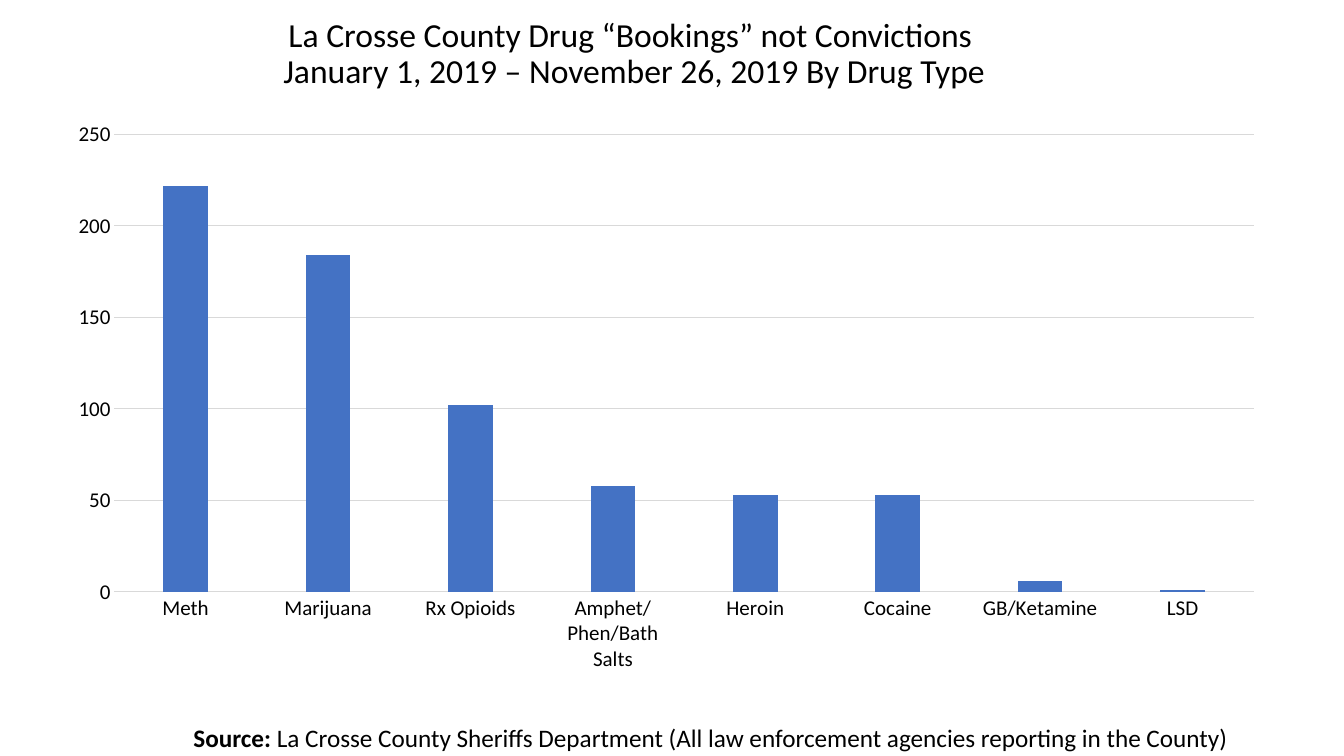
from lxml import etree
from pptx import Presentation
from pptx import util as u
from pptx.chart import data as cd
from pptx.dml.color import RGBColor
from pptx.enum import chart as ch, text as tx
from pptx.oxml import parse_xml
from pptx.oxml.ns import nsdecls, qn

FONT = "Calibri"
HUES = {"ink": "000000", "bar": "4472C4", "grid": "D9D9D9"}
COUNTS = {
    "Meth": 222, "Marijuana": 184, "Rx Opioids": 102,
    "Amphet/Phen/Bath Salts": 58, "Heroin": 53, "Cocaine": 53,
    "GB/Ketamine": 6, "LSD": 1,
}
PLOT = {"x": 0.048, "y": 0.062, "w": 0.927, "h": 0.733}


def hue(name):
    """Return a named colour."""
    return RGBColor.from_string(HUES[name])


def style(font, size, bold=None):
    """Set the face, size and colour of a font."""
    font.name, font.size, font.bold = FONT, u.Pt(size), bold
    font.color.rgb = hue("ink")


def add_box(slide, place, anchor):
    """Add a wrapping text box and return its frame."""
    frame = slide.shapes.add_textbox(*map(u.Inches, place)).text_frame
    frame.word_wrap = True
    frame.vertical_anchor = anchor
    return frame


def add_run(para, words, size, bold=False):
    """Append a styled run."""
    run = para.add_run()
    run.text = words
    style(run.font, size, bold)


def add_title(slide, lines):
    """Add the centred title, one run per line."""
    frame = add_box(slide, (1.29, 0.35, 10, 0.6), tx.MSO_ANCHOR.BOTTOM)
    para = frame.paragraphs[0]
    para.alignment = tx.PP_ALIGN.CENTER
    para.line_spacing = 0.9
    for row, line in enumerate(lines):
        if row:
            para.add_line_break()
        add_run(para, line, 24)


def add_source(slide, label, words):
    """Add the source line with a bold label."""
    frame = add_box(slide, (1.82, 7.12, 10.93, 0.4), tx.MSO_ANCHOR.TOP)
    para = frame.paragraphs[0]
    add_run(para, label, 18, True)
    add_run(para, words, 18)


def set_line(line):
    """Draw a thin grey line."""
    line.color.rgb = hue("grid")
    line.width = u.Pt(0.75)


def set_plot(chart):
    """Fix the inner plot area by fractions of the chart."""
    area = chart._chartSpace.chart.plotArea
    for old in area.findall(qn("c:layout")):
        area.remove(old)
    layout = parse_xml(f"<c:layout {nsdecls('c')}/>")
    manual = etree.SubElement(layout, qn("c:manualLayout"))
    parts = {"layoutTarget": "inner", "xMode": "edge", "yMode": "edge", **PLOT}
    for tag, val in parts.items():
        etree.SubElement(manual, qn(f"c:{tag}")).set("val", str(val))
    area.insert(0, layout)


def add_bars(slide, counts):
    """Add the column chart of bookings."""
    data = cd.CategoryChartData()
    data.categories = list(counts)
    data.add_series("Series 1", list(counts.values()))
    place = map(u.Inches, (0.55, 0.95, 12.19, 6.19))
    kind = ch.XL_CHART_TYPE.COLUMN_CLUSTERED
    chart = slide.shapes.add_chart(kind, *place, data).chart
    chart.has_legend = chart.has_title = False
    style(chart.font, 10)
    plot = chart.plots[0]
    plot.gap_width, plot.overlap = 219, -27
    plot.vary_by_categories = False
    fill = plot.series[0].format.fill
    fill.solid()
    fill.fore_color.rgb = hue("bar")
    for axis in (chart.category_axis, chart.value_axis):
        style(axis.tick_labels.font, 15)
        axis.major_tick_mark = axis.minor_tick_mark = ch.XL_TICK_MARK.NONE
    set_line(chart.category_axis.format.line)
    scale = chart.value_axis
    scale.minimum_scale, scale.maximum_scale, scale.major_unit = 0, 250, 50
    scale.format.line.fill.background()
    set_line(scale.major_gridlines.format.line)
    set_plot(chart)


def main():
    """Build and save the slide."""
    deck = Presentation()
    deck.slide_width, deck.slide_height = u.Inches(13.33), u.Inches(7.5)
    slide = deck.slides.add_slide(deck.slide_layouts[6])
    add_title(slide, ("La Crosse County Drug “Bookings” not Convictions ",
                      "January 1, 2019 – November 26, 2019 By Drug Type"))
    add_bars(slide, COUNTS)
    add_source(slide, "Source:", " La Crosse County Sheriffs Department "
               "(All law enforcement agencies reporting in the County)")
    deck.save("out.pptx")


if __name__ == "__main__":
    main()
